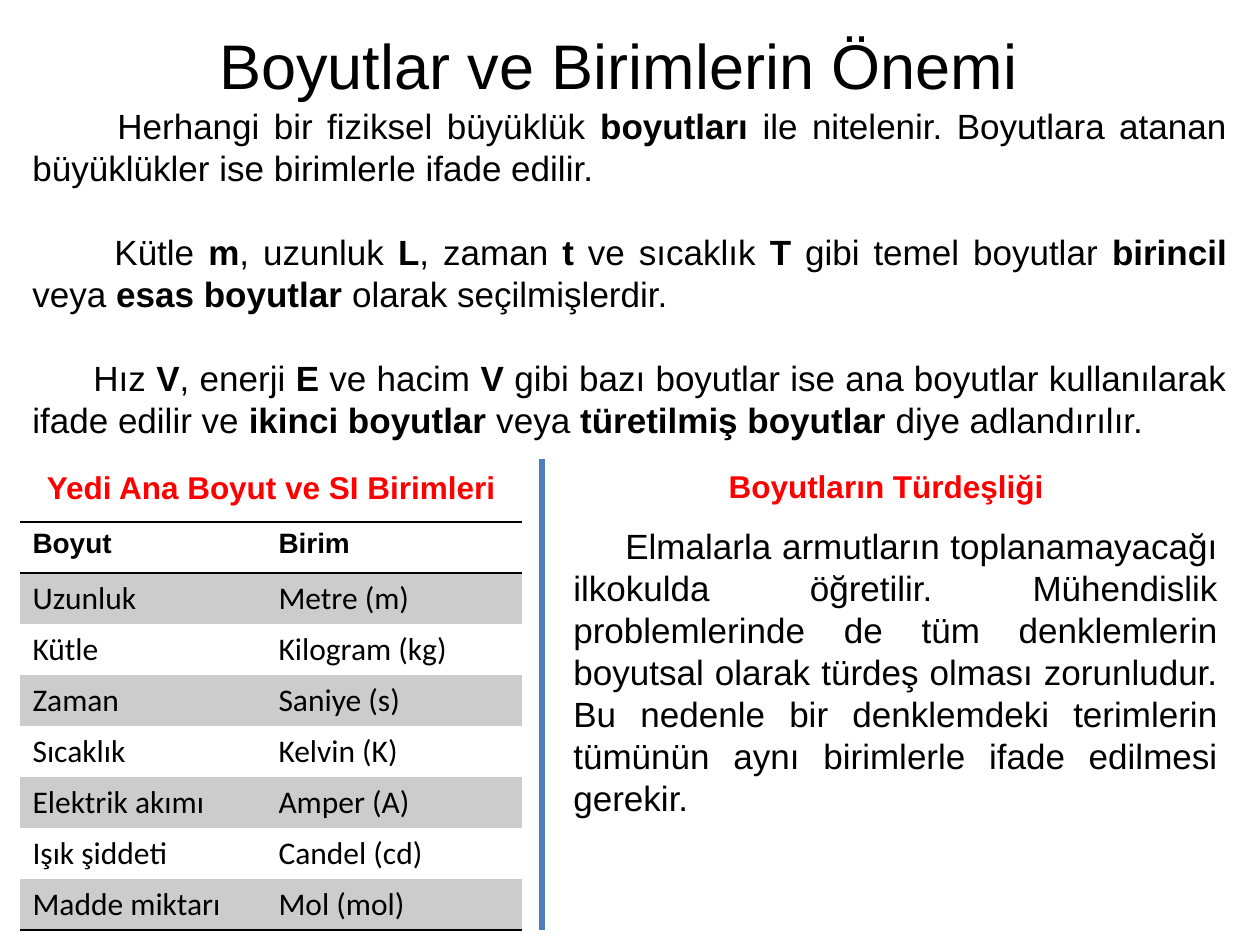
from lxml import etree
from pptx import Presentation
from pptx import util as u
from pptx.dml import color as col
from pptx.enum import shapes, text
from pptx.oxml import ns

PX = 914400 // 126
COLORS = {"ink": "000000", "heading": "FF0000", "divider": "4B7EBC", "band": "CCCCCC"}
TABLE_STYLE = "{2D5ABB26-0587-4C30-8999-92F81FD0307C}"

presentation = Presentation()
presentation.slide_width = u.Inches(10)
presentation.slide_height = u.Inches(7.5)
slide = presentation.slides.add_slide(presentation.slide_layouts[6])


def write_runs(paragraph, content, size, color="ink", name="Arial", bold=False):
    for index, part in enumerate(content.split("*")):
        if part:
            run = paragraph.add_run()
            run.text = part
            values = {"name": name, "size": u.Pt(size), "bold": bold or index % 2 == 1}
            for attribute, value in values.items():
                setattr(run.font, attribute, value)
            run.font.color.rgb = col.RGBColor.from_string(COLORS[color])


def add_text(box, paragraphs, size, align, wrap=True, right=12, line=None, **style):
    shape = slide.shapes.add_textbox(*[value * PX for value in box])
    frame = shape.text_frame
    frame.word_wrap = wrap
    frame.margin_right = right * PX
    for index, (indent, content) in enumerate(paragraphs):
        paragraph = frame.paragraphs[0] if index == 0 else frame.add_paragraph()
        values = {"alignment": align, "line_spacing": line,
                  "space_before": u.Pt(line) if line and index else None}
        if line:
            values["line_spacing"] = u.Pt(line)
        for attribute, value in values.items():
            setattr(paragraph, attribute, value)
        if indent:
            paragraph._p.get_or_add_pPr().set("indent", str(indent * PX))
        write_runs(paragraph, content, size, **style)


add_text((207, 20, 832, 89), [(0, "Boyutlar ve Birimlerin Önemi")], 36,
         text.PP_ALIGN.LEFT, wrap=False)

definitions = [
    (85, "Herhangi bir fiziksel büyüklük *boyutları* ile nitelenir. Boyutlara atanan "
         "büyüklükler ise birimlerle ifade edilir."),
    (82, "Kütle *m*, uzunluk *L*, zaman *t* ve sıcaklık *T* gibi temel boyutlar "
         "*birincil* veya *esas boyutlar* olarak seçilmişlerdir."),
    (61, "Hız *V*, enerji *E* ve hacim *V* gibi bazı boyutlar ise ana boyutlar kullanılarak "
         "ifade edilir ve *ikinci boyutlar* veya *türetilmiş boyutlar* diye adlandırılır."),
]
add_text((20, 98, 1231, 352), definitions, 20, text.PP_ALIGN.JUSTIFY, right=24, line=24)

rows = [
    ("Boyut", "Birim"),
    ("Uzunluk", "Metre (m)"),
    ("Kütle", "Kilogram (kg)"),
    ("Zaman", "Saniye (s)"),
    ("Sıcaklık", "Kelvin (K)"),
    ("Elektrik akımı", "Amper (A)"),
    ("Işık şiddeti", "Candel (cd)"),
    ("Madde miktarı", "Mol (mol)"),
]
last = len(rows) - 1
row_height = 51
graphic = slide.shapes.add_table(len(rows), 2, 20 * PX, 522 * PX, 502 * PX,
                                 row_height * len(rows) * PX)
table = graphic.table
table.first_row = False
table.horz_banding = False
table._tbl.tblPr.find(ns.qn("a:tableStyleId")).text = TABLE_STYLE
for column, width in zip(table.columns, (246, 256)):
    column.width = width * PX
for row_index, row in enumerate(rows):
    table.rows[row_index].height = row_height * PX
    sides = {0: ("lnT", "lnB"), last: ("lnB",)}.get(row_index, ())
    header = row_index == 0
    for column_index, content in enumerate(row):
        cell = table.cell(row_index, column_index)
        properties = cell._tc.get_or_add_tcPr()
        for side in sides:
            border = etree.SubElement(properties, ns.qn(f"a:{side}"), w=str(u.Pt(1)))
            fill = etree.SubElement(border, ns.qn("a:solidFill"))
            etree.SubElement(fill, ns.qn("a:srgbClr"), val=COLORS["ink"])
        if row_index % 2:
            cell.fill.solid()
            cell.fill.fore_color.rgb = col.RGBColor.from_string(COLORS["band"])
        else:
            cell.fill.background()
        write_runs(cell.text_frame.paragraphs[0], content, 16 if header else 18,
                   name="Arial" if header else "Calibri", bold=header)

for left, top, heading in ((25, 462, "Yedi Ana Boyut ve SI Birimleri"),
                           (640, 461, "Boyutların Türdeşliği")):
    add_text((left, top, 492, 50), [(0, heading)], 18, text.PP_ALIGN.CENTER,
             color="heading", bold=True)

divider = slide.shapes.add_connector(shapes.MSO_CONNECTOR.STRAIGHT,
                                     542 * PX, 459 * PX, 542 * PX, 930 * PX)
divider.line.color.rgb = col.RGBColor.from_string(COLORS["divider"])
divider.line.width = u.Pt(3)
etree.SubElement(divider._element.spPr, ns.qn("a:effectLst"))

homogeneity = (
    "Elmalarla armutların toplanamayacağı ilkokulda öğretilir. Mühendislik problemlerinde "
    "de tüm denklemlerin boyutsal olarak türdeş olması zorunludur. Bu nedenle bir "
    "denklemdeki terimlerin tümünün aynı birimlerle ifade edilmesi gerekir."
)
add_text((561, 518, 669, 310), [(52, homogeneity)], 20, text.PP_ALIGN.JUSTIFY, line=24)

presentation.save("out.pptx")
